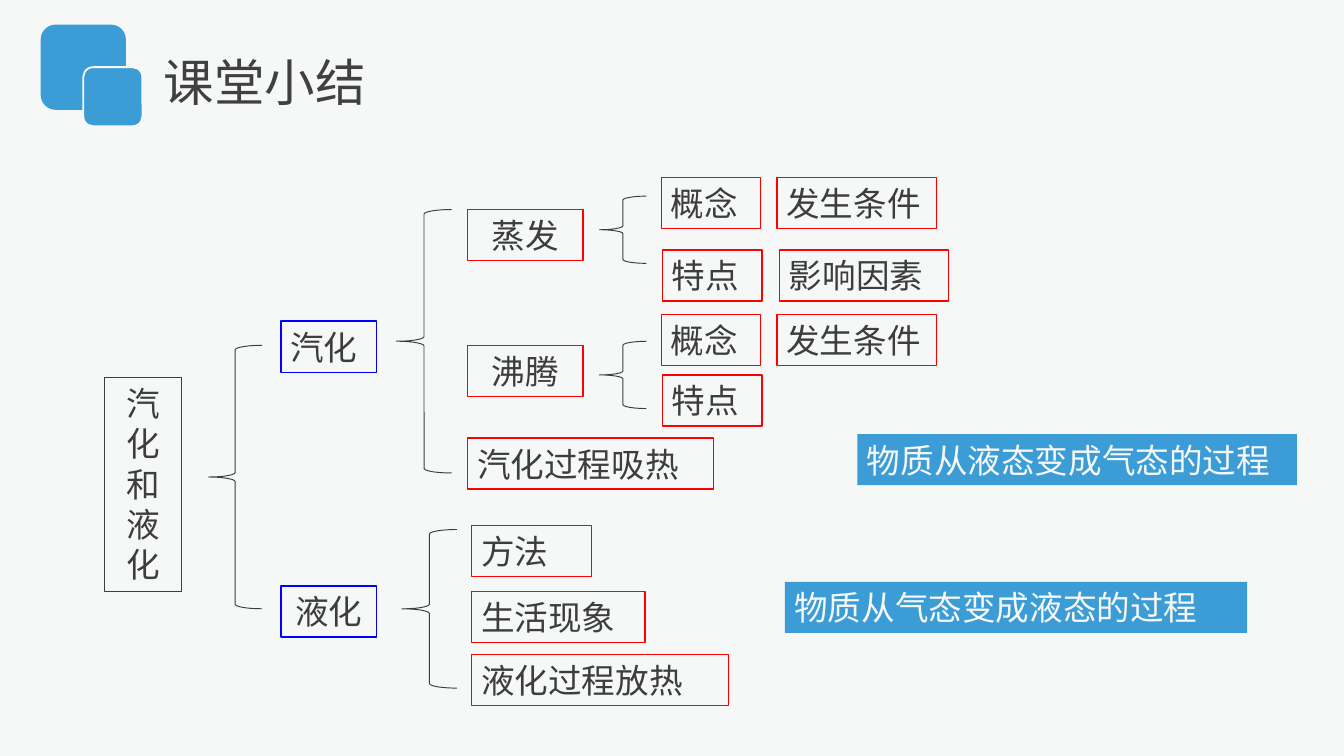
from pptx import Presentation
from pptx.dml.color import RGBColor
from pptx.enum.shapes import MSO_SHAPE
from pptx.enum.text import MSO_ANCHOR, MSO_AUTO_SIZE, PP_ALIGN
from pptx.util import Inches, Pt

PAPER = RGBColor(0xF6, 0xF8, 0xF8)
SKY = RGBColor(0x3C, 0x9C, 0xD6)
INK = RGBColor(0x3D, 0x3D, 0x3D)
TITLE_INK = RGBColor(0x40, 0x40, 0x40)
BLUE = RGBColor(0x00, 0x00, 0xFF)
RED = RGBColor(0xFF, 0x00, 0x00)

ROW_H = 0.38
INSETS = {"margin_left": Inches(0.07), "margin_right": Inches(0.07),
          "margin_top": Inches(0.04), "margin_bottom": Inches(0.04)}


def add_outline(slide, preset, x, y, w, h, fill=None, line=None, weight=0.75):
    sp = slide.shapes.add_shape(preset, Inches(x), Inches(y), Inches(w), Inches(h))
    sp.shadow.inherit = False
    if fill is None:
        sp.fill.background()
    else:
        sp.fill.solid()
        sp.fill.fore_color.rgb = fill
    if line is None:
        sp.line.fill.background()
    else:
        sp.line.color.rgb = line
        sp.line.width = Pt(weight)
    return sp


def set_text(sp, text, size=18, color=INK, align=PP_ALIGN.LEFT):
    tf = sp.text_frame
    frame_format = {**INSETS, "word_wrap": True, "vertical_anchor": MSO_ANCHOR.TOP,
                    "auto_size": MSO_AUTO_SIZE.SHAPE_TO_FIT_TEXT}
    for name, value in frame_format.items():
        setattr(tf, name, value)
    p = tf.paragraphs[0]
    p.alignment = align
    r = p.add_run()
    r.text = text
    for name, value in {"name": "Arial", "size": Pt(size)}.items():
        setattr(r.font, name, value)
    r.font.color.rgb = color


def add_term(slide, text, x, y, w, h=ROW_H, line=RED, align=PP_ALIGN.LEFT):
    sp = add_outline(slide, MSO_SHAPE.RECTANGLE, x, y, w, h, line=line)
    set_text(sp, text, align=align)


def add_definition(slide, text, x, y, w):
    sp = add_outline(slide, MSO_SHAPE.RECTANGLE, x, y, w, ROW_H, fill=SKY)
    set_text(sp, text, color=PAPER)


def add_brace(slide, x, y, w, h):
    add_outline(slide, MSO_SHAPE.LEFT_BRACE, x, y, w, h, line=INK, weight=0.5)


def add_header(slide, x, y):
    for offset, side, line in ((0, 0.62, SKY), (0.31, 0.44, PAPER)):
        add_outline(slide, MSO_SHAPE.ROUNDED_RECTANGLE, x + offset, y + offset,
                    side, side, fill=SKY, line=line, weight=1)
    title = slide.shapes.add_textbox(Inches(x + 0.84), Inches(y + 0.15),
                                     Inches(1.78), Inches(0.53))
    set_text(title, "课堂小结", size=27, color=TITLE_INK)


def add_root(slide, x, y):
    add_term(slide, "汽化和液化", x, y, 0.57, 1.59, INK, PP_ALIGN.CENTER)
    add_brace(slide, x + 0.77, y - 0.24, 0.4, 1.96)


def add_way(slide, x, y, name, name_dy, brace_dy, feature_dy, factor=None):
    """One way of vaporizing, with its concept, condition and features."""
    add_term(slide, name, x, y + name_dy, 0.86, align=PP_ALIGN.CENTER)
    add_brace(slide, x + 0.98, y + brace_dy, 0.35, 0.5)
    add_term(slide, "概念", x + 1.44, y, 0.74)
    add_term(slide, "发生条件", x + 2.3, y, 1.19)
    add_term(slide, "特点", x + 1.45, y + feature_dy, 0.74)
    if factor:
        add_term(slide, factor, x + 2.32, y + feature_dy, 1.26)


def add_vaporization(slide, x, y):
    add_term(slide, "汽化", x, y + 1.07, 0.71, line=BLUE)
    add_brace(slide, x + 0.86, y + 0.24, 0.41, 1.96)
    ways_x = x + 1.39
    add_way(slide, ways_x, y, "蒸发", 0.24, 0.14, 0.54, "影响因素")
    add_way(slide, ways_x, y + 1.02, "沸腾", 0.23, 0.2, 0.45)
    add_term(slide, "汽化过程吸热", ways_x, y + 1.94, 1.83)
    add_definition(slide, "物质从液态变成气态的过程", x + 4.29, y + 1.91, 3.27)


def add_liquefaction(slide, x, y):
    add_term(slide, "液化", x, y + 0.45, 0.71, line=BLUE, align=PP_ALIGN.CENTER)
    add_brace(slide, x + 0.9, y + 0.03, 0.41, 1.18)
    aspects = (("方法", 0, 0.89), ("生活现象", 0.49, 1.29), ("液化过程放热", 0.96, 1.91))
    for text, dy, w in aspects:
        add_term(slide, text, x + 1.42, y + dy, w)
    add_definition(slide, "物质从气态变成液态的过程", x + 3.75, y + 0.42, 3.44)


def main():
    prs = Presentation()
    prs.slide_width = Inches(10)
    prs.slide_height = prs.slide_width * 9 // 16
    slide = prs.slides.add_slide(prs.slide_layouts[6])
    slide.background.fill.solid()
    slide.background.fill.fore_color.rgb = PAPER
    add_header(slide, 0.31, 0.19)
    add_root(slide, 0.78, 2.81)
    add_vaporization(slide, 2.09, 1.32)
    add_liquefaction(slide, 2.09, 3.91)
    prs.save("out.pptx")


if __name__ == "__main__":
    main()
